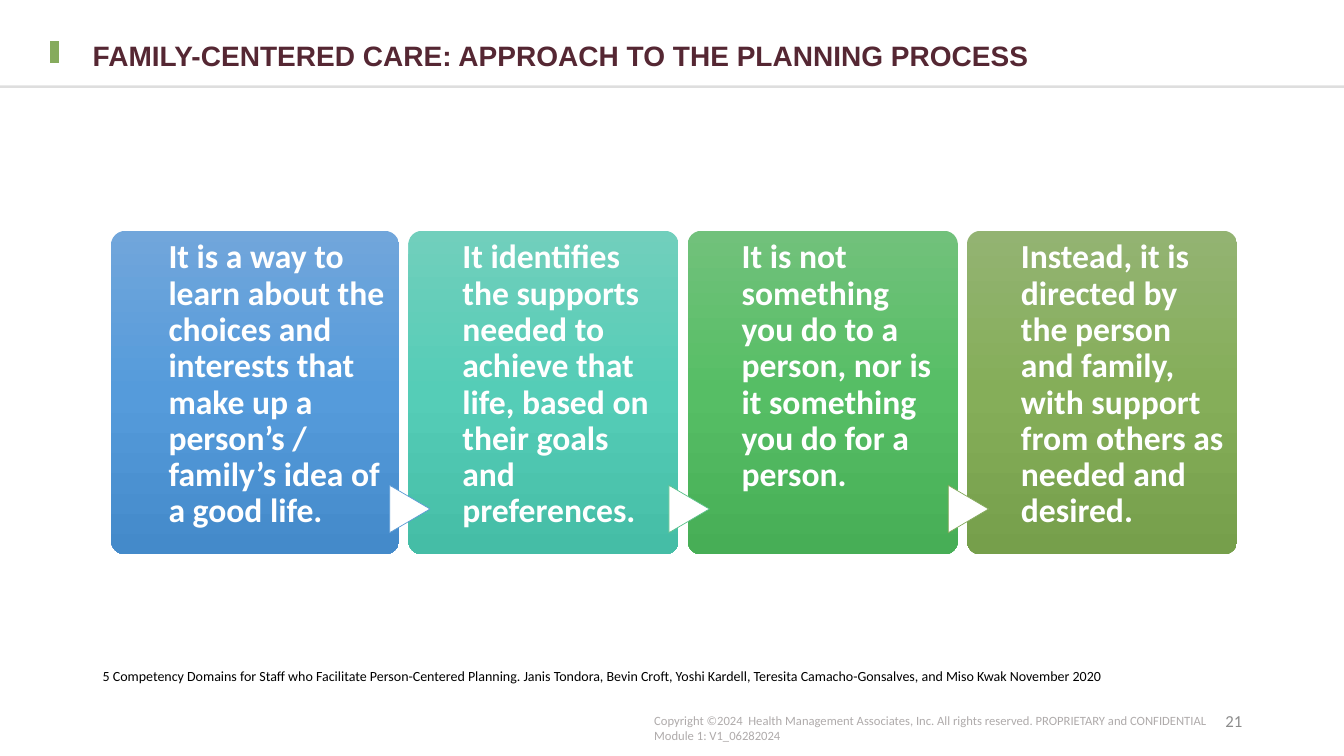
import copy
import lxml.etree
import pptx
import pptx.util
import pptx.dml.color
import pptx.enum.shapes
import pptx.enum.text
import pptx.oxml.ns

Inches = pptx.util.Inches
Pt = pptx.util.Pt
RGB = pptx.dml.color.RGBColor.from_string
qn = pptx.oxml.ns.qn
SHAPE = pptx.enum.shapes.MSO_SHAPE
ANCHOR = pptx.enum.text.MSO_ANCHOR
ALIGN = pptx.enum.text.PP_ALIGN

theme = {
    "title": {"name": "Arial", "size": Pt(20), "bold": True, "color": "552733"},
    "card": {"name": "Calibri", "size": Pt(24), "bold": True, "color": "FFFFFF"},
    "source": {"name": "Calibri", "size": Pt(10), "color": "000000"},
    "legal": {"name": "Calibri", "size": Pt(9), "color": "AFABAB"},
    "number": {"name": "Calibri", "size": Pt(12), "color": "8C8C8C"},
    "rule": "000000",
    "mark": "86AB5D",
    "arrow": "FFFFFF",
    "shades": [
        ("71A6DB", "559BDB", "448ACA"),
        ("71CFBC", "55CDB7", "45BDA6"),
        ("71C17B", "56BE65", "47AE56"),
        ("93B372", "85AE59", "769F4B"),
    ],
    "edges": [None, "5B9BD5", "5BC18B", "85AA5D"],
}

deck = pptx.Presentation()
deck.slide_width = Inches(13.33)
deck.slide_height = Inches(7.5)
slide = deck.slides.add_slide(deck.slide_layouts[6])


def write(area, lines, style, frame={}, para={}):
    box = slide.shapes.add_textbox(*map(Inches, area))
    text = box.text_frame
    for key, value in {"word_wrap": True, **frame}.items():
        setattr(text, key, value)
    text.text = "\n".join(lines)
    for part in text.paragraphs:
        for key, value in para.items():
            setattr(part, key, value)
        for key, value in theme[style].items():
            if key == "color":
                part.font.color.rgb = RGB(value)
            else:
                setattr(part.font, key, value)


def draw(ends, color, width):
    line = slide.shapes.add_connector(
        pptx.enum.shapes.MSO_CONNECTOR.STRAIGHT, *map(Inches, ends))
    line.line.color.rgb = RGB(color)
    line.line.width = Pt(width)
    props = line._element.spPr
    lxml.etree.SubElement(props, qn("a:effectLst"))
    return props


write((6.39, 7.02, 5.74, 0.4), [
    "Copyright ©2024  Health Management Associates, Inc. All rights reserved. PROPRIETARY and CONFIDENTIAL",
    "Module 1: V1_06282024",
], "legal")

rule = draw((0, 0.86, 13.33, 0.86), theme["rule"], 1.75)
lxml.etree.SubElement(rule.find(".//" + qn("a:srgbClr")), qn("a:alpha"), val="12000")
draw((0.54, 0.41, 0.54, 0.63), theme["mark"], 7)

flush = {"margin_left": 0, "margin_top": 0, "margin_right": 0, "margin_bottom": 0}
tight = {"line_spacing": 0.9}
write((0.92, 0.42, 11.5, 0.3),
      ["FAMILY-CENTERED CARE: APPROACH TO THE PLANNING PROCESS"],
      "title", flush, tight)
write((0.92, 6.44, 11.5, 0.4),
      ["5 Competency Domains for Staff who Facilitate Person-Centered Planning. Janis Tondora, Bevin Croft, Yoshi Kardell, Teresita Camacho-Gonsalves, and Miso Kwak November 2020"],
      "source", {"vertical_anchor": ANCHOR.BOTTOM}, tight)

cards = [
    "It is a way to learn about the choices and interests that make up a person’s / family’s idea of a good life.",
    "It identifies the supports needed to achieve that life, based on their goals and preferences.",
    "It is not something you do to a person, nor is it something you do for a person.",
    "Instead, it is directed by the person and family, with support from others as needed and desired.",
]
top, high, gap = 2.29, 3.21, 0.09
left = 1.1
for words, shades, edge in zip(cards, theme["shades"], theme["edges"]):
    wide = 2.68 if edge else 2.86
    card = slide.shapes.add_shape(
        SHAPE.ROUNDED_RECTANGLE, Inches(left), Inches(top), Inches(wide), Inches(high))
    card.adjustments[0] = 0.05
    card.shadow.inherit = False
    card.line.fill.background()
    card.fill.gradient()
    card.fill.gradient_angle = 270
    stops = card._element.spPr.find(".//" + qn("a:gsLst"))
    stops.append(copy.deepcopy(stops[-1]))
    for step, (stop, shade) in enumerate(zip(card.fill.gradient_stops, shades)):
        stop.position = step / 2
        stop.color.rgb = RGB(shade)

    if edge:
        arrow = slide.shapes.add_shape(
            SHAPE.FLOWCHART_EXTRACT, Inches(left - 0.22), Inches(4.85),
            Inches(0.47), Inches(0.4))
        arrow.rotation = 90
        arrow.shadow.inherit = False
        arrow.fill.solid()
        arrow.fill.fore_color.rgb = RGB(theme["arrow"])
        arrow.line.color.rgb = RGB(edge)
        arrow.line.width = Pt(0.5)

    write((left + 0.2 * wide, top, 0.75 * wide, high), [words], "card",
          {**flush, "margin_top": Inches(0.09)}, tight)
    left += wide + gap

write((9.42, 6.95, 3, 0.4), ["21"], "number",
      {"vertical_anchor": ANCHOR.MIDDLE}, {"alignment": ALIGN.RIGHT})

deck.save("out.pptx")
